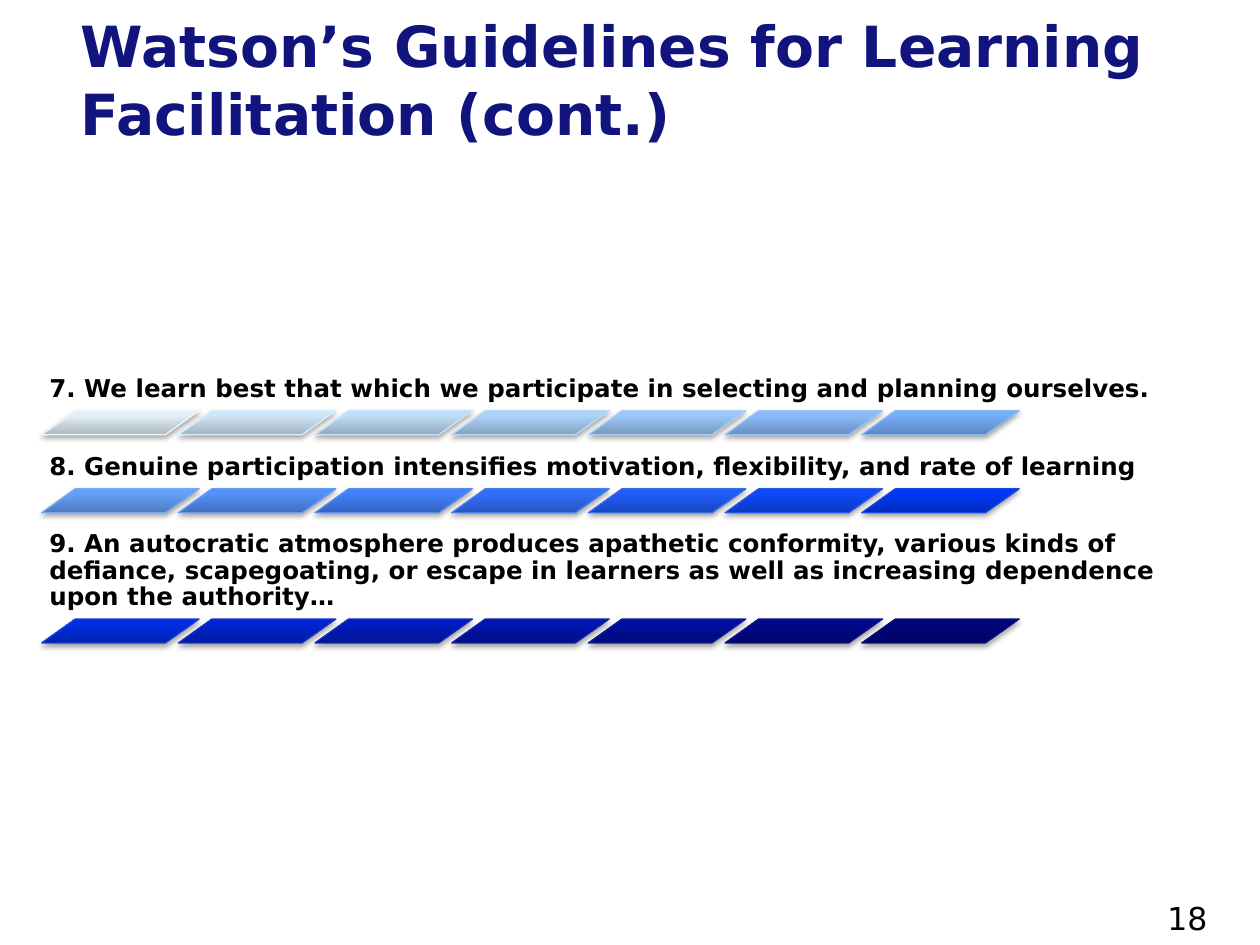
from dataclasses import dataclass

from lxml.etree import SubElement
from pptx import Presentation
from pptx.dml.color import RGBColor
from pptx.enum.shapes import MSO_SHAPE
from pptx.enum.text import MSO_ANCHOR
from pptx.oxml.ns import qn
from pptx.util import Pt


@dataclass(frozen=True)
class Theme:
    font: str = "DejaVu Sans"
    title: str = "11147D"
    text: str = "000000"
    shadow: str = "000000"
    title_size: float = 32.4
    body_size: float = 14
    number_size: float = 18


THEME = Theme()
BAR_H, BAR_W, BAR_STEP, ROW_GAP = 13.7, 90, 78.1, 4.7

GUIDELINES = [
    ("7. We learn best that which we participate in selecting and planning ourselves.", 28.8,
     [("AEB8BF", "E2EFF8", "ECF6FD"), ("A0B2BF", "D0E7F8", "DCEDFB"),
      ("93AABF", "BEDDF8", "CBE4F9"), ("85A2C0", "ACD3F9", "BBDAF8"),
      ("779AC0", "9BC8F9", "ABCFF6"), ("6990C0", "89BBF9", "9BC3F4"),
      ("5C86C0", "77AEFA", "8AB6F2")]),
    ("8. Genuine participation intensifies motivation, flexibility, and rate of learning", 26.2,
     [("4E7BC0", "65A0FA", "7AA9F0"), ("406FC1", "5390FA", "6A9AEE"),
      ("3363C1", "4280FA", "5A8BEC"), ("2555C1", "306FFA", "4A7BEA"),
      ("1747C1", "1F5CFA", "3A6BE8"), ("0A38C1", "0D49FA", "2A59E6"),
      ("002BBD", "0037F6", "1B48E3")]),
    ("9. An autocratic atmosphere produces apathetic conformity, various kinds of defiance, "
     "scapegoating, or escape in learners as well as increasing dependence upon the authority…", 56,
     [("0023B0", "002DE4", "193ED3"), ("001CA2", "0024D3", "1734C2"),
      ("001595", "001BC1", "152CB2"), ("000F87", "0014B0", "1424A2"),
      ("000B7A", "000E9E", "121D91"), ("00066C", "00088D", "101681"),
      ("00035F", "00047B", "0E1171")]),
]


def add_text(s, text, box, size, color=THEME.text, bold=False,
             anchor=MSO_ANCHOR.TOP, margins=(7.2, 3.6, 7.2, 3.6), spacing=None):
    tf = s.shapes.add_textbox(*map(Pt, box)).text_frame
    tf.word_wrap = True
    tf.vertical_anchor = anchor
    tf.margin_left, tf.margin_top, tf.margin_right, tf.margin_bottom = map(Pt, margins)
    p = tf.paragraphs[0]
    p.line_spacing = spacing
    r = p.add_run()
    r.text = text
    r.font.name, r.font.size, r.font.bold = THEME.font, Pt(size), bold
    r.font.color.rgb = RGBColor.from_string(color)


def add_shadow(sp):
    sp.shadow.inherit = False
    effects = sp.element.spPr.find(qn("a:effectLst"))
    shadow = SubElement(effects, qn("a:outerShdw"), blurRad=str(Pt(3.1)),
                        dist=str(Pt(1.8)), dir="5400000", rotWithShape="0")
    color = SubElement(shadow, qn("a:srgbClr"), val=THEME.shadow)
    SubElement(color, qn("a:alpha"), val="35000")


def add_bar(s, box, dark, light, outline):
    sp = s.shapes.add_shape(MSO_SHAPE.PARALLELOGRAM, *map(Pt, box))
    sp.adjustments[0] = 1.408
    sp.fill.gradient()
    sp.fill.gradient_angle = 90
    for stop, position, color in zip(sp.fill.gradient_stops, (0, 0.8), (dark, light)):
        stop.position = position
        stop.color.rgb = RGBColor.from_string(color)
    sp.line.color.rgb = RGBColor.from_string(outline)
    sp.line.width = Pt(0.75)
    add_shadow(sp)


def add_guideline(s, box, text, colors):
    left, top, width, height = box
    text_h = height - BAR_H
    add_text(s, text, (left, top, width, text_h), THEME.body_size, bold=True,
             anchor=MSO_ANCHOR.BOTTOM, margins=(4.4,) * 4, spacing=0.9)
    for i, shades in enumerate(colors):
        add_bar(s, (left + i * BAR_STEP, top + text_h, BAR_W, BAR_H), *shades)


def add_guidelines(s, box):
    left, top, width = box
    for text, text_h, colors in GUIDELINES:
        height = text_h + BAR_H
        add_guideline(s, (left, top, width, height), text, colors)
        top += height + ROW_GAP


def add_title(s, box):
    add_text(s, "Watson’s Guidelines for Learning Facilitation (cont.)", box,
             THEME.title_size, THEME.title, bold=True, anchor=MSO_ANCHOR.MIDDLE,
             margins=(22.3, 3.6, 7.2, 3.6))


def main():
    prs = Presentation()
    prs.slide_width, prs.slide_height = Pt(720), Pt(540)
    s = prs.slides.add_slide(prs.slide_layouts[6])
    add_title(s, (23.8, 12.2, 684, 66.2))
    add_guidelines(s, (23.8, 205.9, 672.5))
    add_text(s, "18", (660, 510, 60, 19.4), THEME.number_size)
    prs.save("out.pptx")


if __name__ == "__main__":
    main()
